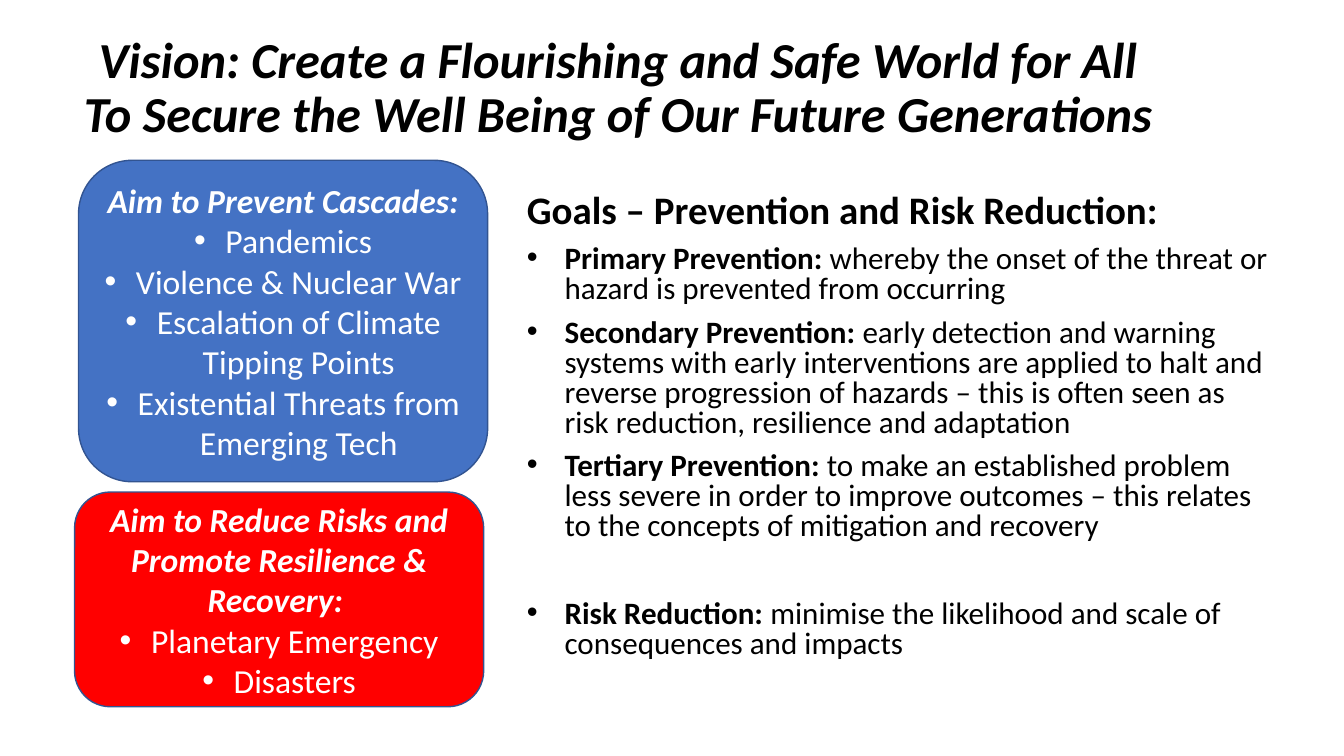
from pptx import Presentation
from pptx.dml.color import RGBColor
from pptx.enum.shapes import MSO_SHAPE
from pptx.enum.text import MSO_ANCHOR, MSO_AUTO_SIZE, PP_ALIGN
from pptx.oxml.ns import qn
from pptx.util import Cm, Pt
from lxml.etree import SubElement

BLACK = RGBColor(0x00, 0x00, 0x00)
WHITE = RGBColor(0xFF, 0xFF, 0xFF)
BLUE = RGBColor(0x44, 0x72, 0xC4)
RED = RGBColor(0xFF, 0x00, 0x00)
OUTLINE = RGBColor(0x32, 0x54, 0x91)
FONT = "Calibri"

VISION = ("Vision: Create a Flourishing and Safe World for All \v"
          "To Secure the Well Being of Our Future Generations ")
GOALS_HEADING = "Goals – Prevention and Risk Reduction:"
# Term, explanation, space before in points
GOALS = [
    ("Primary Prevention: ",
     "whereby the onset of the threat or hazard is prevented from occurring", 10),
    ("Secondary Prevention: ",
     "early detection and warning systems with early interventions are applied "
     "to halt and reverse progression of hazards – this is often seen as risk "
     "reduction, resilience and adaptation", 10),
    ("Tertiary Prevention: ",
     "to make an established problem less severe in order to improve outcomes "
     "– this relates to the concepts of mitigation and recovery", 10),
    ("Risk Reduction: ",
     "minimise the likelihood and scale of consequences and impacts", 41.5),
]
PREVENT = ("Aim to Prevent Cascades: ",
           ["Pandemics", "Violence & Nuclear War",
            "Escalation of Climate Tipping Points",
            "Existential Threats from Emerging Tech"])
REDUCE = ("Aim to Reduce Risks and Promote Resilience & Recovery: ",
          ["Planetary Emergency", "Disasters"])


def set_font(paragraph, size, color, bold=False, italic=False):
    font = paragraph.font
    font.name, font.size = FONT, Pt(size)
    font.bold, font.italic = bold, italic
    font.color.rgb = color


def add_bullet(paragraph, indent):
    props = paragraph._p.get_or_add_pPr()
    props.set("marL", str(indent))
    props.set("indent", str(-indent))
    bullet_font = SubElement(props, qn("a:buFont"))
    bullet_font.set("typeface", "Arial")
    SubElement(props, qn("a:buChar")).set("char", "•")
    # The schema wants default run properties after the bullet
    defaults = props.find(qn("a:defRPr"))
    if defaults is not None:
        props.append(defaults)


def place_title(slide, left, top, width, height):
    title = slide.shapes.title
    title.left, title.top, title.width, title.height = left, top, width, height
    frame = title.text_frame
    frame.auto_size = MSO_AUTO_SIZE.NONE
    frame.vertical_anchor = MSO_ANCHOR.MIDDLE
    frame.text = VISION
    vision = frame.paragraphs[0]
    vision.alignment = PP_ALIGN.CENTER
    vision.line_spacing = 0.9
    set_font(vision, 36, BLACK, bold=True, italic=True)


def add_goals(slide, left, top, width, height):
    frame = slide.shapes.add_textbox(left, top, width, height).text_frame
    frame.word_wrap = True
    heading = frame.paragraphs[0]
    heading.text = GOALS_HEADING
    heading.line_spacing, heading.space_before = 0.8, Pt(10)
    set_font(heading, 27.8, BLACK, bold=True)
    for term, explanation, gap in GOALS:
        goal = frame.add_paragraph()
        goal.line_spacing, goal.space_before = 0.8, Pt(gap)
        set_font(goal, 22.2, BLACK)
        add_bullet(goal, Cm(0.95))
        term_run = goal.add_run()
        term_run.text = term
        term_run.font.bold = True
        goal.add_run().text = explanation


def add_aim(slide, aim, fill, left, top, width, height):
    heading, threats = aim
    card = slide.shapes.add_shape(
        MSO_SHAPE.ROUNDED_RECTANGLE, left, top, width, height)
    card.shadow.inherit = False
    card.fill.solid()
    card.fill.fore_color.rgb = fill
    card.line.color.rgb = OUTLINE
    card.line.width = Pt(1)
    frame = card.text_frame
    frame.word_wrap = True
    frame.vertical_anchor = MSO_ANCHOR.MIDDLE
    frame.text = "\n".join([heading, *threats])
    for number, line in enumerate(frame.paragraphs):
        is_heading = number == 0
        line.alignment = PP_ALIGN.CENTER
        set_font(line, 24, WHITE, bold=is_heading, italic=is_heading)
        if not is_heading:
            add_bullet(line, Cm(0.79))


def main():
    deck = Presentation()
    deck.slide_width, deck.slide_height = Cm(33.87), Cm(19.05)
    slide = deck.slides.add_slide(deck.slide_layouts[5])
    place_title(slide, Cm(1.12), Cm(0.41), Cm(29.21), Cm(3.68))
    add_goals(slide, Cm(13.03), Cm(4.78), Cm(19.33), Cm(12.09))
    add_aim(slide, PREVENT, BLUE, Cm(1.98), Cm(4.04), Cm(10.31), Cm(8.1))
    add_aim(slide, REDUCE, RED, Cm(1.88), Cm(12.4), Cm(10.31), Cm(5.41))
    deck.save("out.pptx")


if __name__ == "__main__":
    main()
